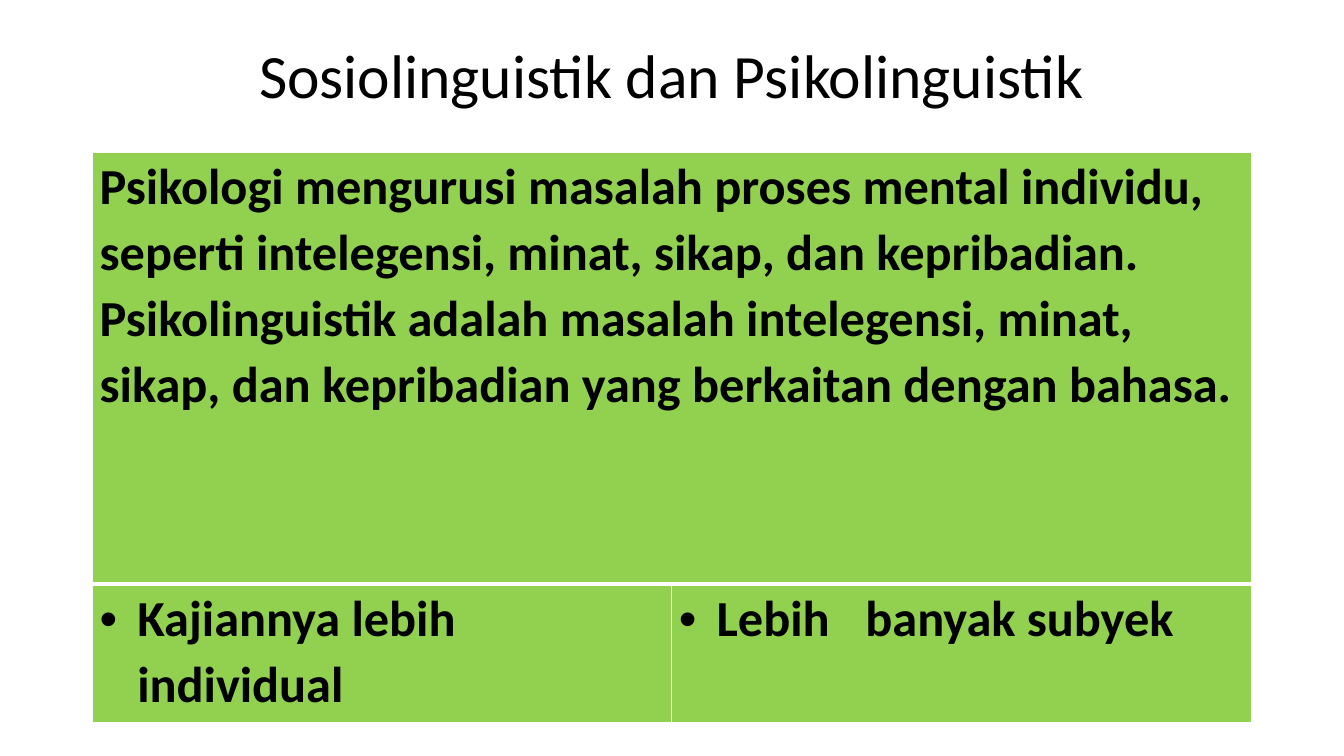
from dataclasses import dataclass

from lxml.etree import SubElement
from pptx import Presentation
from pptx.dml.color import RGBColor
from pptx.enum.text import MSO_ANCHOR, PP_ALIGN
from pptx.oxml.ns import qn
from pptx.slide import Slide
from pptx.table import Table, _Cell
from pptx.text.text import TextFrame
from pptx.util import Cm, Pt

BLACK = "000000"
WHITE = "FFFFFF"
GREEN = "92D050"
LEFT, WIDTH = 2.33, 29.2
BULLET_INDENT = 0.95
TAB_STOP = 4.7


@dataclass
class TableEntry:
    row: int
    column: int
    text: str
    bullet: bool = False
    top_border: float = 1
    bottom_border: float = 1


TABLE_ENTRIES = [
    TableEntry(
        0, 0,
        "Psikologi mengurusi masalah proses mental individu, seperti intelegensi, "
        "minat, sikap, dan kepribadian. Psikolinguistik adalah masalah intelegensi, "
        "minat, sikap, dan kepribadian yang berkaitan dengan bahasa.",
        bottom_border=3,
    ),
    TableEntry(1, 0, "Kajiannya lebih individual", bullet=True, top_border=3),
    TableEntry(1, 1, "Lebih\tbanyak subyek", bullet=True, top_border=3),
]


def color(value: str) -> RGBColor:
    return RGBColor.from_string(value)


def write_text(frame: TextFrame, text: str, *, size: float, bold: bool = False,
               align: PP_ALIGN = PP_ALIGN.LEFT, line_spacing: float = 1,
               bullet: bool = False) -> None:
    frame.word_wrap = True
    paragraph = frame.paragraphs[0]
    paragraph.text = text
    paragraph.alignment = align
    paragraph.line_spacing = line_spacing
    if bullet:
        properties = paragraph._p.get_or_add_pPr()
        properties.set("marL", str(Cm(BULLET_INDENT)))
        properties.set("indent", str(-Cm(BULLET_INDENT)))
        SubElement(properties, qn("a:buFont"), typeface="Arial")
        SubElement(properties, qn("a:buChar"), char="•")
        if "\t" in text:
            tab_list = SubElement(properties, qn("a:tabLst"))
            SubElement(tab_list, qn("a:tab"), pos=str(Cm(TAB_STOP)), algn="l")
    for run in paragraph.runs:
        run.font.name = "Calibri"
        run.font.size = Pt(size)
        run.font.bold = bold
        run.font.color.rgb = color(BLACK)


def set_borders(cell: _Cell, top: float, bottom: float) -> None:
    properties = cell._tc.get_or_add_tcPr()
    widths = {"a:lnL": 1, "a:lnR": 1, "a:lnT": top, "a:lnB": bottom}
    for tag, width in widths.items():
        line = SubElement(properties, qn(tag), w=str(Pt(width)))
        fill = SubElement(line, qn("a:solidFill"))
        SubElement(fill, qn("a:srgbClr"), val=WHITE)


def fill_cell(table: Table, entry: TableEntry) -> None:
    cell = table.cell(entry.row, entry.column)
    cell.margin_left = cell.margin_right = Cm(0.18)
    cell.margin_top = cell.margin_bottom = Cm(0)
    set_borders(cell, entry.top_border, entry.bottom_border)
    cell.fill.solid()
    cell.fill.fore_color.rgb = color(GREEN)
    write_text(cell.text_frame, entry.text, size=36, bold=True,
               line_spacing=1.07, bullet=entry.bullet)


def add_title(slide: Slide, text: str) -> None:
    box = slide.shapes.add_textbox(Cm(LEFT), Cm(1.01), Cm(WIDTH), Cm(3.68))
    box.text_frame.vertical_anchor = MSO_ANCHOR.TOP
    write_text(box.text_frame, text, size=44, align=PP_ALIGN.CENTER, line_spacing=0.9)


def add_comparison_table(slide: Slide) -> None:
    row_heights = (10.87, 3.5)
    table = slide.shapes.add_table(2, 2, Cm(LEFT), Cm(3.84), Cm(WIDTH),
                                   Cm(sum(row_heights))).table
    table.first_row = table.horz_banding = False
    for row, height in zip(table.rows, row_heights):
        row.height = Cm(height)
    table.cell(0, 0).merge(table.cell(0, 1))
    for entry in TABLE_ENTRIES:
        fill_cell(table, entry)


def main() -> None:
    presentation = Presentation()
    presentation.slide_width, presentation.slide_height = Cm(33.87), Cm(19.05)
    slide = presentation.slides.add_slide(presentation.slide_layouts[6])
    add_title(slide, "Sosiolinguistik dan Psikolinguistik")
    add_comparison_table(slide)
    presentation.save("out.pptx")


if __name__ == "__main__":
    main()
